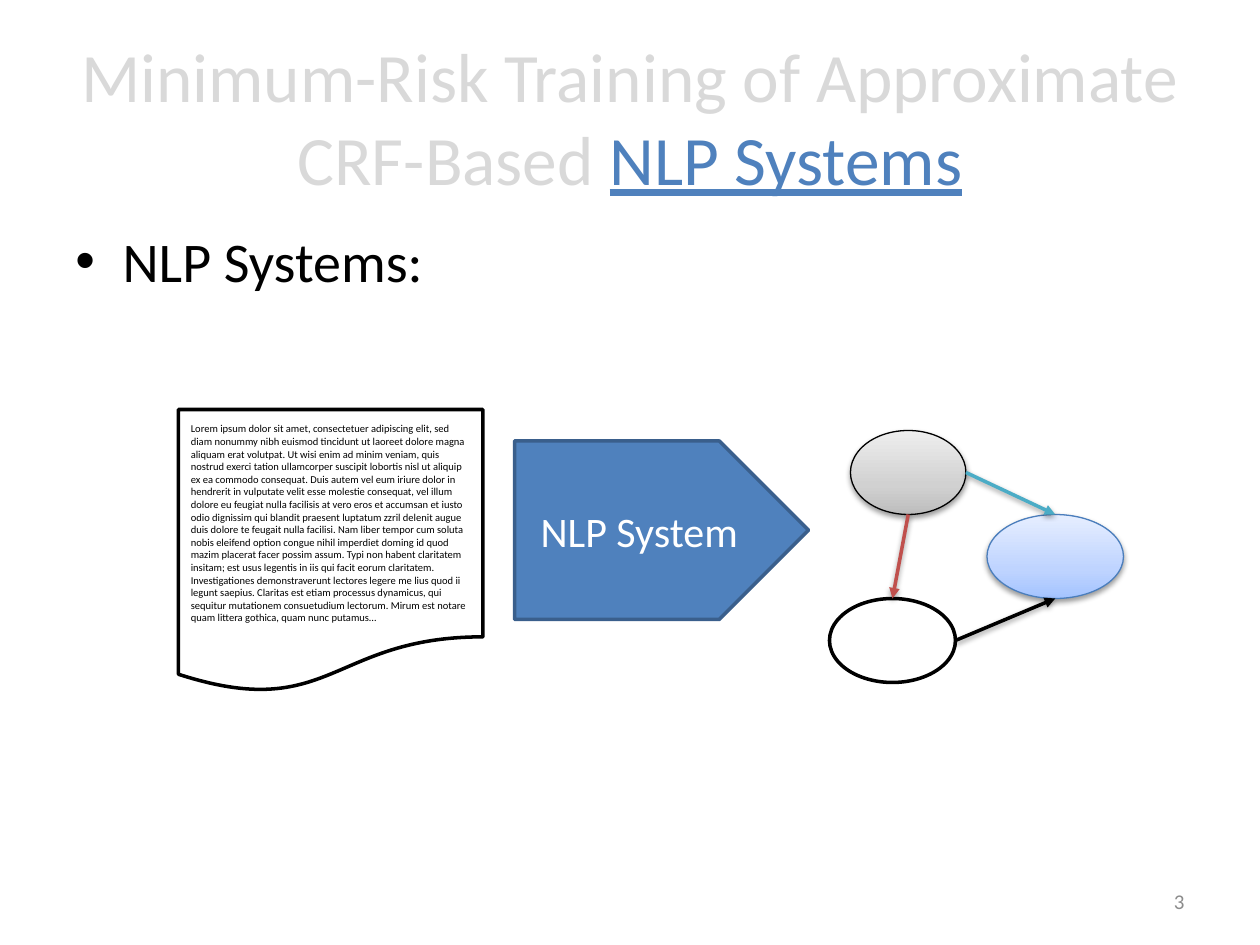
"""Build the NLP Systems slide: a document flows through a system into a graph."""
from dataclasses import dataclass

from lxml import etree
from pptx import Presentation
from pptx.dml.color import RGBColor
from pptx.enum.shapes import MSO_CONNECTOR, MSO_SHAPE
from pptx.enum.text import MSO_ANCHOR, PP_ALIGN
from pptx.oxml import parse_xml
from pptx.oxml.ns import nsdecls, qn
from pptx.util import Emu, Pt

PX = 7620
LEFT, CENTER, RIGHT = PP_ALIGN.LEFT, PP_ALIGN.CENTER, PP_ALIGN.RIGHT
TOP, MIDDLE = MSO_ANCHOR.TOP, MSO_ANCHOR.MIDDLE
DOCUMENT, PENTAGON, OVAL = MSO_SHAPE.FLOWCHART_DOCUMENT, MSO_SHAPE.PENTAGON, MSO_SHAPE.OVAL
STRAIGHT = MSO_CONNECTOR.STRAIGHT

SENTENCES = [
    "Lorem ipsum dolor sit amet, consectetuer adipiscing elit, sed diam nonummy nibh euismod "
    "tincidunt ut laoreet dolore magna aliquam erat volutpat.",
    "Ut wisi enim ad minim veniam, quis nostrud exerci tation ullamcorper suscipit lobortis nisl "
    "ut aliquip ex ea commodo consequat.",
    "Duis autem vel eum iriure dolor in hendrerit in vulputate velit esse molestie consequat, vel "
    "illum dolore eu feugiat nulla facilisis at vero eros et accumsan et iusto odio dignissim qui "
    "blandit praesent luptatum zzril delenit augue duis dolore te feugait nulla facilisi.",
    "Nam liber tempor cum soluta nobis eleifend option congue nihil imperdiet doming id quod mazim "
    "placerat facer possim assum.",
    "Typi non habent claritatem insitam; est usus legentis in iis qui facit eorum claritatem.",
    "Investigationes demonstraverunt lectores legere me lius quod ii legunt saepius.",
    "Claritas est etiam processus dynamicus, qui sequitur mutationem consuetudium lectorum.",
    "Mirum est notare quam littera gothica, quam nunc putamus…",
]


@dataclass(frozen=True)
class Theme:
    font: str = "Calibri"
    title_size: float = 39.6
    body_size: int = 32
    label_size: int = 24
    number_size: int = 12
    page_size: int = 6
    black: str = "000000"
    white: str = "FFFFFF"
    faded: str = "D9D9D9"
    muted: str = "8C8C8C"
    accent: str = "4F81BD"
    accent_edge: str = "3A5F8C"
    node_edge: str = "4B7EBC"
    red: str = "C0504D"
    teal: str = "4BACC6"
    gray_fade: tuple = ((0, "BDBDBD"), (35, "D1D1D1"), (100, "EEEEEE"))
    blue_fade: tuple = ((0, "A4C4FF"), (35, "BFD4FF"), (100, "E6EEFF"))
    thin: float = 0.75
    thick: int = 2


def px(n):
    return Emu(n * PX)


def rgb(color):
    return RGBColor.from_string(color)


def write(tf, runs, font, size, align=LEFT, anchor=TOP):
    """Fill a text frame with (text, color, underline) runs and return the paragraph."""
    tf.word_wrap = True
    tf.vertical_anchor = anchor
    p = tf.paragraphs[0]
    p.alignment = align
    for text, color, underline in runs:
        r = p.add_run()
        r.text = text
        r.font.name, r.font.size = font, Pt(size)
        r.font.color.rgb = rgb(color)
        r.font.underline = underline
    return p


def add_shadow(sp_pr):
    effects = sp_pr.find(qn("a:effectLst"))
    effects.append(parse_xml(
        f'<a:outerShdw {nsdecls("a")} blurRad="40000" dist="20000" dir="5400000" rotWithShape="0">'
        '<a:srgbClr val="000000"><a:alpha val="38000"/></a:srgbClr></a:outerShdw>'))


def set_gradient(sp, stops):
    marks = "".join(f'<a:gs pos="{pos * 1000}"><a:srgbClr val="{color}"/></a:gs>' for pos, color in stops)
    sp._element.spPr.find(qn("a:prstGeom")).addnext(parse_xml(
        f'<a:gradFill {nsdecls("a")} rotWithShape="1"><a:gsLst>{marks}</a:gsLst>'
        '<a:lin ang="16200000" scaled="0"/></a:gradFill>'))


def top(sp):
    return sp.left + sp.width // 2, sp.top


def bottom(sp):
    return sp.left + sp.width // 2, sp.top + sp.height


def right(sp):
    return sp.left + sp.width, sp.top + sp.height // 2


class Deck:
    """Hold the theme and the current slide."""

    def __init__(self, theme):
        self.theme = theme
        self.prs = Presentation()
        self.prs.slide_width, self.prs.slide_height = px(1200), px(900)
        self.s = self.prs.slides.add_slide(self.prs.slide_layouts[6])

    def text(self, box, runs, size, **fmt):
        tf = self.s.shapes.add_textbox(*map(px, box)).text_frame
        return write(tf, runs, self.theme.font, size, **fmt)

    def bullet(self, box, text, size, indent):
        p = self.text(box, [(text, self.theme.black, None)], size)
        p.space_before = Pt(size * 0.2)
        p_pr = p._p.get_or_add_pPr()
        p_pr.set("marL", str(px(indent)))
        p_pr.set("indent", str(-px(indent)))
        etree.SubElement(p_pr, qn("a:buFont")).set("typeface", "Arial")
        etree.SubElement(p_pr, qn("a:buChar")).set("char", "•")

    def shape(self, kind, box, fill, line, width, shadow=False):
        sp = self.s.shapes.add_shape(kind, *map(px, box))
        if isinstance(fill, str):
            sp.fill.solid()
            sp.fill.fore_color.rgb = rgb(fill)
        else:
            set_gradient(sp, fill)
        sp.line.color.rgb = rgb(line)
        sp.line.width = Pt(width)
        sp.shadow.inherit = False
        if shadow:
            add_shadow(sp._element.spPr)
        return sp

    def label(self, sp, text, size, color, align):
        write(sp.text_frame, [(text, color, None)], self.theme.font, size, align, MIDDLE)

    def arrow(self, head, tail, color):
        cx = self.s.shapes.add_connector(STRAIGHT, *head, *tail)
        cx.line.color.rgb = rgb(color)
        cx.line.width = Pt(self.theme.thick)
        sp_pr = cx._element.spPr
        etree.SubElement(sp_pr.find(qn("a:ln")), qn("a:headEnd")).set("type", "triangle")
        etree.SubElement(sp_pr, qn("a:effectLst"))
        add_shadow(sp_pr)


def main():
    t = Theme()
    deck = Deck(t)
    deck.text((60, 36, 1080, 150),
              [("Minimum-Risk Training of Approximate CRF-Based ", t.faded, None),
               ("NLP Systems", t.accent, True)],
              t.title_size, align=CENTER, anchor=MIDDLE)
    deck.bullet((60, 210, 1080, 594), "NLP Systems:", t.body_size, 45)
    deck.text((860, 834, 280, 48), [("3", t.muted, None)], t.number_size, align=RIGHT, anchor=MIDDLE)

    page = deck.shape(DOCUMENT, (170, 390, 290, 270), t.white, t.black, t.thick)
    deck.label(page, " ".join(SENTENCES), t.page_size, t.black, LEFT)
    system = deck.shape(PENTAGON, (490, 420, 280, 170), t.accent, t.accent_edge, t.thick)
    deck.label(system, "NLP System", t.label_size, t.white, CENTER)

    gray = deck.shape(OVAL, (810, 410, 110, 80), t.gray_fade, t.black, t.thin, shadow=True)
    blue = deck.shape(OVAL, (940, 490, 130, 80), t.blue_fade, t.node_edge, t.thin, shadow=True)
    white = deck.shape(OVAL, (790, 570, 120, 80), t.white, t.black, t.thick)
    deck.arrow(top(white), bottom(gray), t.red)
    deck.arrow(bottom(blue), right(white), t.black)
    deck.arrow(top(blue), right(gray), t.teal)
    deck.prs.save("out.pptx")


if __name__ == "__main__":
    main()
